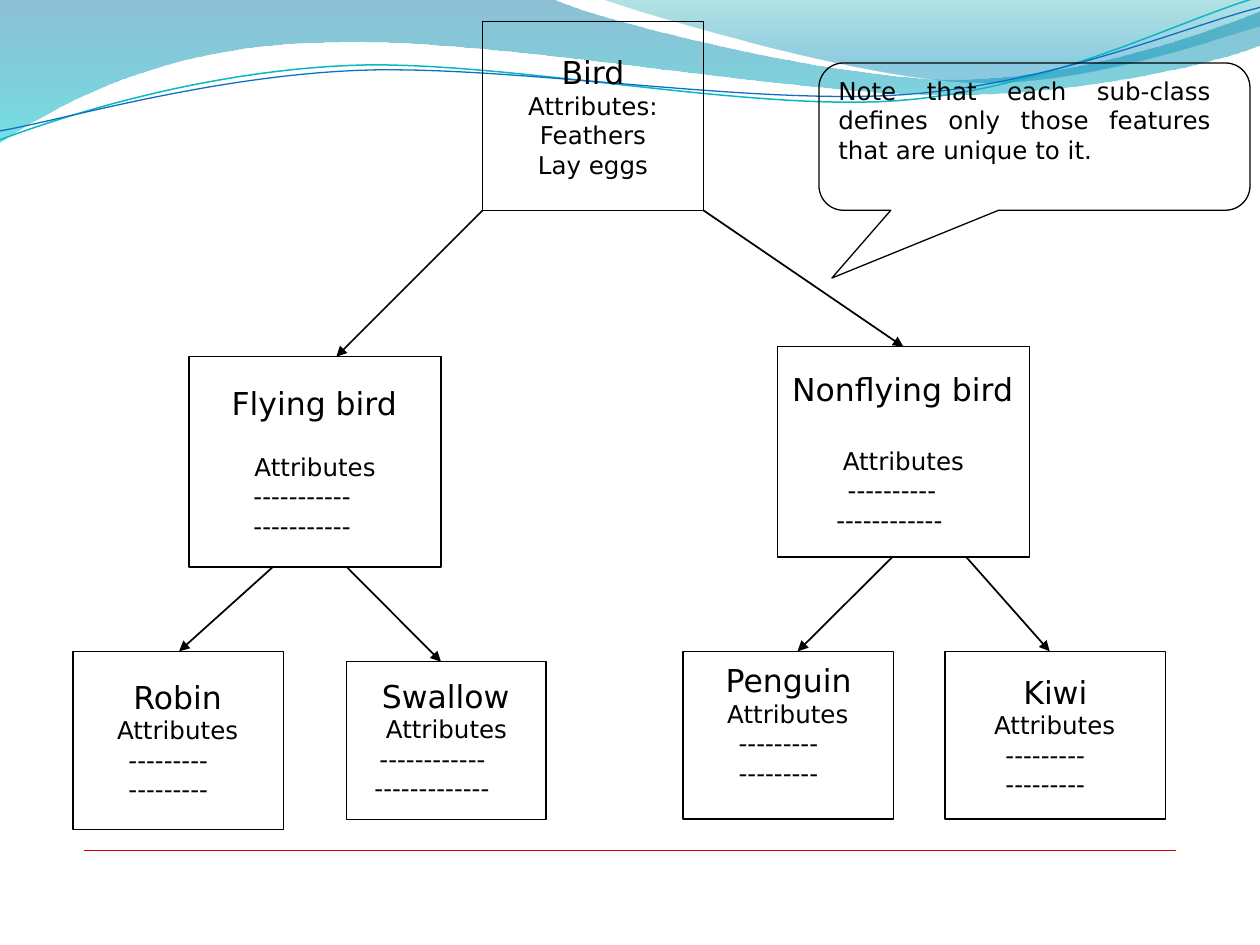
"""Draw a class tree of birds under a wave banner."""
from dataclasses import dataclass
from typing import Any, NamedTuple

from lxml import etree
from pptx import Presentation
from pptx.dml.color import RGBColor
from pptx.enum.shapes import MSO_CONNECTOR, MSO_SHAPE
from pptx.enum.text import MSO_ANCHOR, PP_ALIGN
from pptx.oxml.ns import qn
from pptx.util import Cm, Pt

STRAIGHT = MSO_CONNECTOR.STRAIGHT
RECTANGLE = MSO_SHAPE.RECTANGLE
CALLOUT = MSO_SHAPE.ROUNDED_RECTANGULAR_CALLOUT
TOP = MSO_ANCHOR.TOP
LEFT, CENTER, JUSTIFY = PP_ALIGN.LEFT, PP_ALIGN.CENTER, PP_ALIGN.JUSTIFY


@dataclass(frozen=True)
class Theme:
    font: str = "DejaVu Sans"
    heading: float = 18
    body: float = 14
    ink: str = "000000"
    rule: str = "CC0000"
    outline: float = 0.75
    arrow: float = 1
    hairline: float = 0.25


class Frame(NamedTuple):
    left: float
    top: float
    width: float
    height: float


class Line(NamedTuple):
    text: str
    indent: float = 0
    before: float = 0
    align: Any = LEFT


class Node(NamedTuple):
    frame: Frame
    inset: float
    lines: list[Line]


class Stop(NamedTuple):
    position: float
    color: str
    opacity: int


class Wave(NamedTuple):
    start: tuple[float, float]
    segments: list[tuple[float, ...]]
    stops: tuple[Stop, ...] = ()
    color: str = ""
    weight: float = 0


THEME = Theme()
WAVES = [
    Wave((0, 0), [(11.18, 0), (12.09, 0.43, 16.87, 1.6, 19.25, 1.6),
                  (21.67, 1.6, 24.33, 0.66, 25.4, 0.23), (25.4, 0.91),
                  (24.97, 1.12, 22.1, 1.93, 18.95, 1.91),
                  (15.8, 1.91, 9.7, 0.71, 6.53, 0.86),
                  (3.28, 0.91, 1.17, 2.11, 0, 2.87)],
         (Stop(0, "0074A1", 45), Stop(1, "00C6CF", 55))),
    Wave((12.17, 0), [(12.93, 0.28, 17.32, 1.57, 19.53, 1.65),
                      (21.74, 1.75, 24.41, 0.81, 25.4, 0.53), (25.4, 0)],
         (Stop(0, "00A1A9", 30), Stop(0.8, "008BBF", 45))),
    Wave((0, 2.82), [(1.22, 2.36, 4.01, 1.45, 7.04, 1.32),
                     (10.03, 1.19, 15.06, 2.26, 18.11, 2.03),
                     (21.16, 1.8, 23.83, 0.38, 25.35, -0.05)],
         color="0AB8BF", weight=0.85),
    Wave((0, 2.64), [(1.19, 2.44, 4.17, 1.55, 7.19, 1.42),
                     (10.24, 1.3, 15.14, 2.13, 18.21, 1.91),
                     (21.23, 1.7, 23.9, 0.53, 25.4, 0.15)],
         color="0F6FC6", weight=0.75),
]
NODES = [
    Node(Frame(9.73, 0.43, 4.45, 3.81), 0.64,
         [Line(text, align=CENTER) for text in ("Bird", "Attributes:", "Feathers", "Lay eggs")]),
    Node(Frame(3.81, 7.19, 5.08, 4.24), 0.56,
         [Line("Flying bird", 0.86), Line("Attributes", 1.32, 16.9),
          Line("-" * 11, 1.3), Line("-" * 11, 1.3)]),
    Node(Frame(15.67, 6.99, 5.08, 4.24), 0.46,
         [Line("Nonflying bird", 0.3), Line("Attributes", 1.32, 21.9),
          Line("-" * 10, 1.42), Line("-" * 12, 1.19)]),
    Node(Frame(19.05, 13.13, 4.45, 3.38), 0.43,
         [Line("Kiwi", align=CENTER), Line("Attributes", 0.99),
          Line("-" * 9, 1.22), Line("-" * 9, 1.22)]),
    Node(Frame(13.77, 13.13, 4.24, 3.38), 0.2,
         [Line("Penguin", 0.86), Line("Attributes", 0.89),
          Line("-" * 9, 1.12), Line("-" * 9, 1.12)]),
    Node(Frame(6.99, 13.34, 4.02, 3.18), 0.3,
         [Line("Swallow", 0.71), Line("Attributes", 0.79),
          Line("-" * 12, 0.66), Line("-" * 13, 0.56)]),
    Node(Frame(1.47, 13.13, 4.24, 3.6), 0.53,
         [Line("Robin", 1.22), Line("Attributes", 0.89),
          Line("-" * 9, 1.12), Line("-" * 9, 1.12)]),
]
ARROWS = [
    (9.73, 4.24, 6.78, 7.19), (14.18, 4.24, 18.21, 6.99),
    (5.5, 11.43, 3.61, 13.13), (6.99, 11.43, 8.89, 13.34),
    (18, 11.22, 16.08, 13.13), (19.47, 11.22, 21.16, 13.13),
]
NOTE = "Note that each sub-class defines only those features that are unique to it."


def assign(target: Any, values: dict[str, Any]) -> None:
    for name, value in values.items():
        setattr(target, name, value)


def stroke(shape: Any, color: str, weight: float) -> None:
    shape.line.width = Pt(weight)
    shape.line.color.rgb = RGBColor.from_string(color)


def curve(start: tuple[float, float], segment: tuple[float, ...],
          steps: int = 24) -> list[tuple[float, float]]:
    if len(segment) == 2:
        return [segment]
    points = [start, segment[:2], segment[2:4], segment[4:]]
    result = []
    for step in range(1, steps + 1):
        t = step / steps
        weights = ((1 - t) ** 3, 3 * t * (1 - t) ** 2, 3 * t * t * (1 - t), t ** 3)
        result.append(tuple(sum(w * p[axis] for w, p in zip(weights, points))
                            for axis in (0, 1)))
    return result


def draw_wave(page: Any, wave: Wave) -> None:
    points = [wave.start]
    for segment in wave.segments:
        points += curve(points[-1], segment)
    builder = page.shapes.build_freeform(Cm(wave.start[0]), Cm(wave.start[1]))
    builder.add_line_segments([(Cm(x), Cm(y)) for x, y in points[1:]], close=bool(wave.stops))
    shape = builder.convert_to_shape()
    shape.shadow.inherit = False
    if not wave.stops:
        shape.fill.background()
        stroke(shape, wave.color, wave.weight)
        return
    shape.line.fill.background()
    shape.fill.gradient()
    shape.fill.gradient_angle = 270
    for target, stop in zip(shape.fill.gradient_stops, wave.stops):
        target.position = stop.position
        target.color.rgb = RGBColor.from_string(stop.color)
    for color, stop in zip(shape._element.spPr.iter(qn("a:srgbClr")), wave.stops):
        etree.SubElement(color, qn("a:alpha"), val=str(stop.opacity * 1000))


def draw_shape(page: Any, kind: Any, frame: Frame) -> Any:
    shape = page.shapes.add_shape(kind, *map(Cm, frame))
    shape.shadow.inherit = False
    shape.fill.background()
    stroke(shape, THEME.ink, THEME.outline)
    return shape


def write(box: Any, lines: list[Line], sizes: list[float], top: float, right: float = 0) -> None:
    frame = box.text_frame
    assign(frame, {"word_wrap": True, "vertical_anchor": TOP, "margin_left": 0,
                   "margin_top": Cm(top), "margin_right": Cm(right), "margin_bottom": 0})
    for index, (line, size) in enumerate(zip(lines, sizes)):
        para = frame.add_paragraph() if index else frame.paragraphs[0]
        assign(para, {"alignment": line.align, "space_before": Pt(line.before)})
        para._p.get_or_add_pPr().set("marL", str(Cm(line.indent)))
        span = para.add_run()
        span.text = line.text
        assign(span.font, {"name": THEME.font, "size": Pt(size)})
        span.font.color.rgb = RGBColor.from_string(THEME.ink)


def draw_line(page: Any, ends: tuple[float, ...], color: str, weight: float,
              arrow: bool = False) -> None:
    line = page.shapes.add_connector(STRAIGHT, *map(Cm, ends))
    stroke(line, color, weight)
    if arrow:
        etree.SubElement(line.line._get_or_add_ln(), qn("a:tailEnd"), type="triangle")
    etree.SubElement(line._element.spPr, qn("a:effectLst"))


def main() -> None:
    deck = Presentation()
    assign(deck, {"slide_width": Cm(25.4), "slide_height": Cm(19.05)})
    page = deck.slides.add_slide(deck.slide_layouts[6])
    for wave in WAVES:
        draw_wave(page, wave)
    draw_line(page, (1.7, 17.15, 23.7, 17.15), THEME.rule, THEME.hairline)
    for node in NODES:
        box = draw_shape(page, RECTANGLE, node.frame)
        write(box, node.lines, [THEME.heading] + [THEME.body] * 3, node.inset)
    for ends in ARROWS:
        draw_line(page, ends, THEME.ink, THEME.arrow, arrow=True)
    callout = draw_shape(page, CALLOUT, Frame(16.51, 1.27, 8.69, 2.97))
    callout.adjustments[0], callout.adjustments[1] = -0.47, 0.96
    note = page.shapes.add_textbox(*map(Cm, Frame(16.87, 1.5, 7.95, 1.85)))
    write(note, [Line(NOTE, 0.03, align=JUSTIFY)], [THEME.body], 0.03, 0.41)
    deck.save("out.pptx")


if __name__ == "__main__":
    main()
